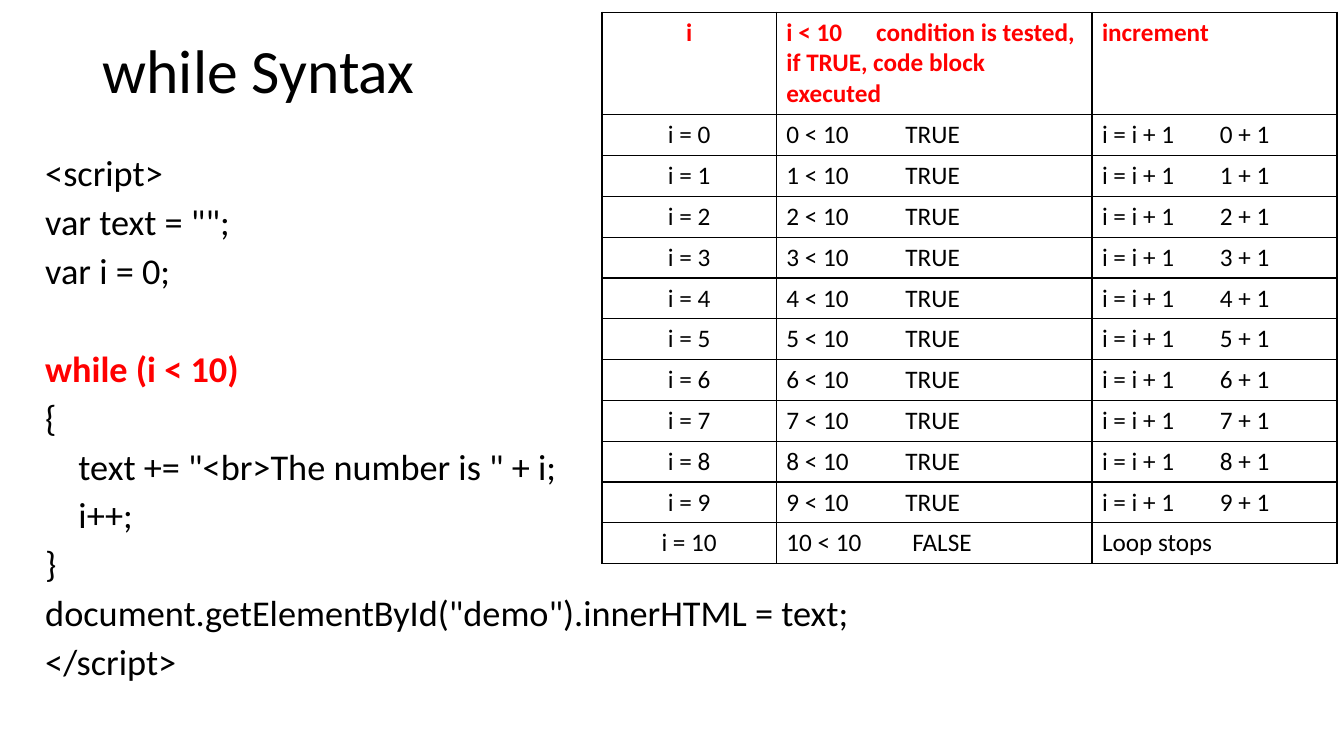
from lxml.etree import SubElement
from pptx import Presentation
from pptx.dml.color import RGBColor
from pptx.enum.text import MSO_ANCHOR, PP_ALIGN
from pptx.oxml.ns import qn
from pptx.util import Inches, Pt

BLACK, RED, WHITE = "000000", "FF0000", "FFFFFF"
TITLE = "while Syntax"
CODE_SIZE, CODE_GAP, BLANK_LINE, CODE_INDENT = 25.9, 10, 34.9, 0.33
CODE = [
    ("<script>", {}),
    ('var text = "";', {}),
    ("var i = 0;", {}),
    ("while (i < 10)", {"color": RED, "bold": True, "before": CODE_GAP + BLANK_LINE}),
    ("{", {}),
    ('text += "<br>The number is " + i;', {"indent": CODE_INDENT}),
    ("i++;", {"indent": CODE_INDENT}),
    ("}", {}),
    ('document.getElementById("demo").innerHTML = text;', {}),
    ("</script>", {}),
]
LIMIT = 10
HEADER = ("i", "i < 10\tcondition is tested, if TRUE, code block executed", "increment")
STEPS = [(f"i = {i}", f"{i} < {LIMIT}\tTRUE", f"i = i + 1\t{i} + 1") for i in range(LIMIT)]
LAST = (f"i = {LIMIT}", f"{LIMIT} < {LIMIT}\tFALSE", "Loop stops")
ROWS = [HEADER, *STEPS, LAST]
HEADER_TABS, STEP_TABS, LAST_TABS = (None, 0.89, None), (None, 1.18, 1.17), (None, 1.25, None)
TABS = [HEADER_TABS, *[STEP_TABS] * LIMIT, LAST_TABS]
COLUMN_WIDTHS = (1.73, 3.13, 2.43)
HEADER_HEIGHT, ROW_HEIGHT = 1.02, 0.405


def rgb(value):
    """Turn a hex string into a colour."""
    return RGBColor.from_string(value)


def write(para, text, size=18, color=BLACK, bold=False, align=PP_ALIGN.LEFT,
          spacing=None, before=0, indent=0, tab=None):
    """Put formatted text into a paragraph."""
    span = para.add_run()
    span.text = text
    span.font.name = "Calibri"
    span.font.size = Pt(size)
    span.font.bold = bold
    span.font.color.rgb = rgb(color)
    para.alignment = align
    para.space_before = Pt(before)
    if spacing:
        para.line_spacing = spacing
    properties = para._p.get_or_add_pPr()
    if indent:
        properties.set("marL", str(Inches(indent)))
    if tab:
        stops = SubElement(properties, qn("a:tabLst"))
        SubElement(stops, qn("a:tab"), pos=str(Inches(tab)), algn="l")


def add_box(page, left, top, width, height, anchor):
    """Add a wrapping text box and return its text frame."""
    box = page.shapes.add_textbox(Inches(left), Inches(top), Inches(width), Inches(height))
    frame = box.text_frame
    frame.word_wrap = True
    frame.vertical_anchor = anchor
    return frame


def style_cell(cell):
    """Give a cell a white fill and thin black borders."""
    properties = cell._tc.get_or_add_tcPr()
    for side in ("lnL", "lnR", "lnT", "lnB"):
        line = SubElement(properties, qn(f"a:{side}"), w=str(Pt(1)))
        fill = SubElement(line, qn("a:solidFill"))
        SubElement(fill, qn("a:srgbClr"), val=BLACK)
    cell.fill.solid()
    cell.fill.fore_color.rgb = rgb(WHITE)


def add_code(page):
    """Add the script listing."""
    frame = add_box(page, 0.35, 1.53, 9.08, 5.57, MSO_ANCHOR.TOP)
    for number, (text, extra) in enumerate(CODE):
        para = frame.add_paragraph() if number else frame.paragraphs[0]
        write(para, text, **{"size": CODE_SIZE, "spacing": 0.8, "before": CODE_GAP, **extra})


def add_trace(page):
    """Add the table that traces the loop."""
    heights = [HEADER_HEIGHT] + [ROW_HEIGHT] * (len(ROWS) - 1)
    table = page.shapes.add_table(
        len(ROWS), len(COLUMN_WIDTHS), Inches(5.97), Inches(0.12),
        Inches(sum(COLUMN_WIDTHS)), Inches(sum(heights))).table
    table.first_row = table.horz_banding = False
    for column, width in zip(table.columns, COLUMN_WIDTHS):
        column.width = Inches(width)
    for r, (texts, tabs) in enumerate(zip(ROWS, TABS)):
        table.rows[r].height = Inches(heights[r])
        for c, (text, tab) in enumerate(zip(texts, tabs)):
            cell = table.cell(r, c)
            style_cell(cell)
            write(cell.text_frame.paragraphs[0], text, tab=tab, bold=r == 0,
                  color=BLACK if r else RED, align=PP_ALIGN.LEFT if c else PP_ALIGN.CENTER)


def main():
    """Build and save the slide."""
    deck = Presentation()
    deck.slide_width, deck.slide_height = Inches(13.33), Inches(7.5)
    page = deck.slides.add_slide(deck.slide_layouts[6])
    title = add_box(page, 0.92, 0, 11.5, 1.45, MSO_ANCHOR.MIDDLE)
    write(title.paragraphs[0], TITLE, size=44, spacing=0.9)
    add_code(page)
    add_trace(page)
    deck.save("out.pptx")


if __name__ == "__main__":
    main()
